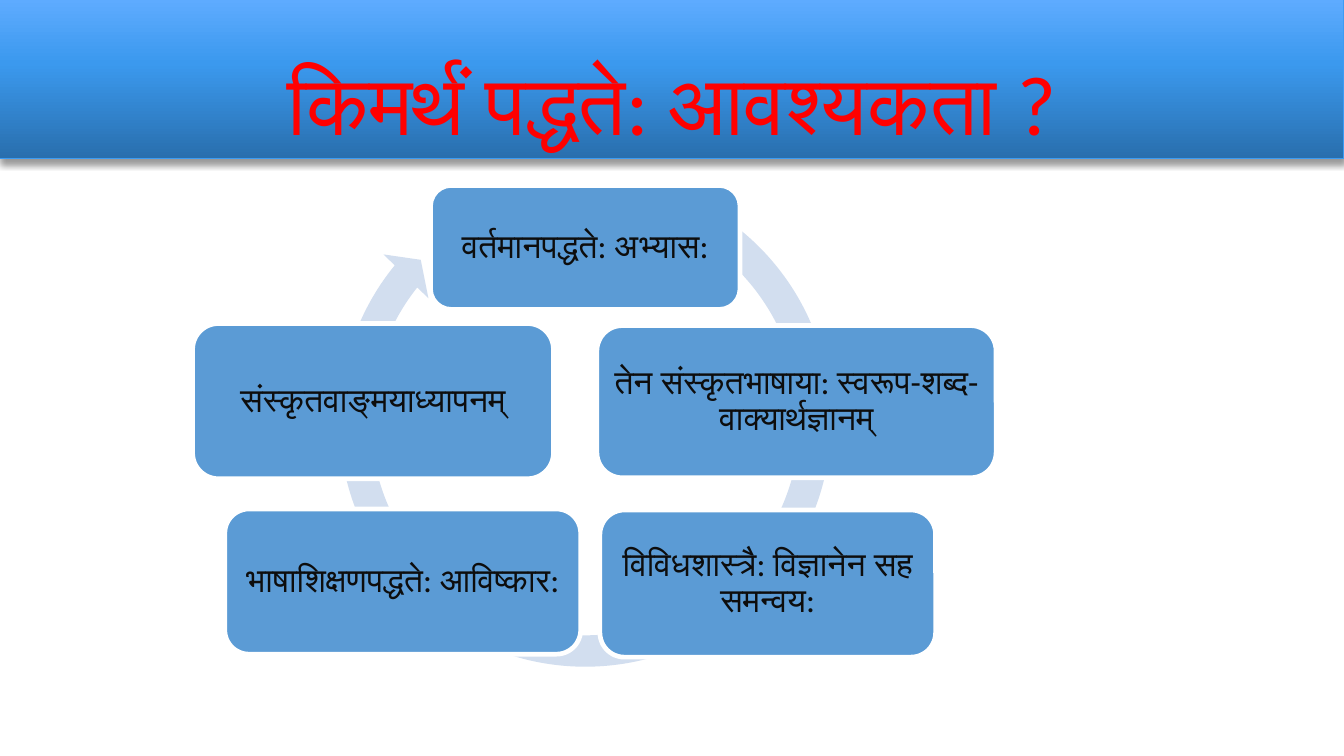
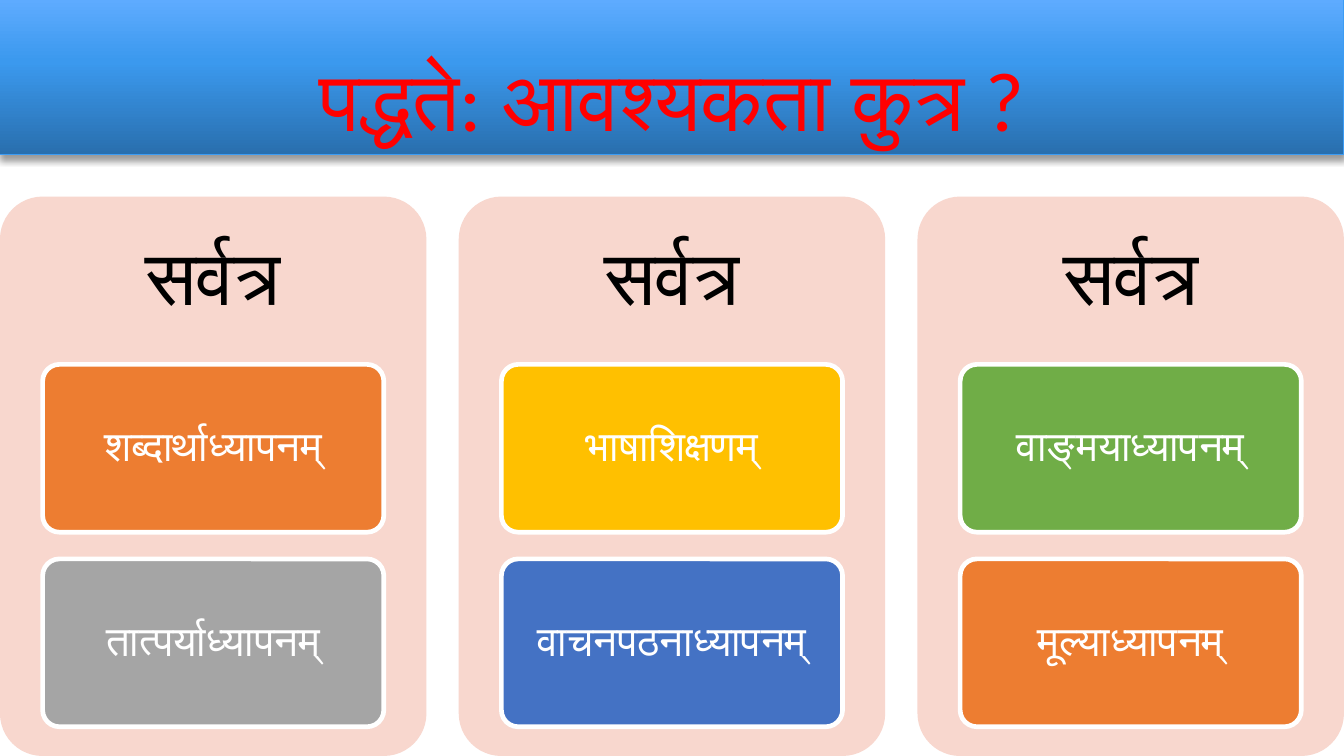
from copy import deepcopy
from dataclasses import dataclass

from lxml.etree import SubElement
from pptx import Presentation
from pptx.dml.color import RGBColor
from pptx.enum.shapes import MSO_SHAPE
from pptx.enum.text import MSO_ANCHOR, PP_ALIGN
from pptx.oxml.ns import qn
from pptx.shapes.autoshape import Shape
from pptx.slide import Slide
from pptx.util import Inches, Pt

WIDTH, HEIGHT = 13.33, 7.5
BODY_FONT, CARD_FONT = "Calibri", "Noto Sans Mono"
COLOURS = {
    "title": "FF0000", "band_line": "3C9CF4", "shadow": "000000",
    "arrow": "D2DEEF", "step": "5B9BD5", "step_text": "0D0D0D",
    "panel": "F8D7CE", "heading": "000000", "white": "FFFFFF",
    "orange": "ED7D31", "grey": "A5A5A5", "gold": "FFC000",
    "blue": "4472C4", "green": "70AD47",
}
BAND_GRADIENT = ((0, "296FAE"), (0.6, "3B99EE"), (1, "5EABFF"))
OUTLINE = 3.35


@dataclass(frozen=True)
class Frame:
    left: float
    top: float
    width: float
    height: float

    def lengths(self) -> tuple[int, ...]:
        return tuple(Inches(v) for v in (self.left, self.top, self.width, self.height))


@dataclass(frozen=True)
class TextStyle:
    size: float
    colour: str
    font: str = BODY_FONT
    anchor: MSO_ANCHOR = MSO_ANCHOR.MIDDLE
    margins: tuple[float, float] = (0.1, 0.1)


@dataclass(frozen=True)
class Step:
    frame: Frame
    text: str


@dataclass(frozen=True)
class Column:
    heading: str
    cards: tuple[tuple[str, str], ...]


TITLE = TextStyle(60, "title", anchor=MSO_ANCHOR.BOTTOM, margins=(0.1, 0.05))
STEP = TextStyle(24, "step_text")
HEADING = TextStyle(55, "heading", margins=(0.23, 0.23))
CARD = TextStyle(30, "white", font=CARD_FONT, margins=(0.08, 0.06))

STEPS = (
    Step(Frame(4.27, 1.84, 3.07, 1.23), "वर्तमानपद्धते: अभ्यास:"),
    Step(Frame(5.92, 3.23, 3.96, 1.51), "तेन संस्कृतभाषाया: स्वरूप-शब्द-वाक्यार्थज्ञानम्"),
    Step(Frame(5.95, 5.06, 3.33, 1.46), "विविधशास्त्रै: विज्ञानेन सह समन्वय:"),
    Step(Frame(2.23, 5.05, 3.53, 1.44), "भाषाशिक्षणपद्धते: आविष्कार:"),
    Step(Frame(1.91, 3.21, 3.58, 1.54), "संस्कृतवाङ्मयाध्यापनम्"),
)
CYCLE_FRAME = Frame(3.21, 1.58, 5.19, 5.19)
# Thickness, head angle, end angle, start angle and head width.
CYCLE_ADJUSTMENTS = (0.06, 3.31, 131.32, 177.91, 0.06)

COLUMNS = (
    Column("सर्वत्र", (("शब्दार्थाध्यापनम्", "orange"), ("तात्पर्याध्यापनम्", "grey"))),
    Column("सर्वत्र", (("भाषाशिक्षणम्", "gold"), ("वाचनपठनाध्यापनम्", "blue"))),
    Column("सर्वत्र", (("वाङ्मयाध्यापनम्", "green"), ("मूल्याध्यापनम्", "orange"))),
)
COLUMN_GAP = 0.32
PANEL_TOP = 1.95
CARD_PITCH = 1.93


def rgb(name: str) -> RGBColor:
    return RGBColor.from_string(COLOURS[name])


def write(box: Shape, text: str, style: TextStyle) -> None:
    frame = box.text_frame
    frame.word_wrap = True
    frame.vertical_anchor = style.anchor
    side, edge = (Inches(margin) for margin in style.margins)
    frame.margin_left = frame.margin_right = side
    frame.margin_top = frame.margin_bottom = edge
    frame.text = text
    para = frame.paragraphs[0]
    para.alignment = PP_ALIGN.CENTER
    para.line_spacing = 0.9
    font = para.runs[0].font
    font.size, font.name = Pt(style.size), style.font
    font.color.rgb = rgb(style.colour)


def add_block(page: Slide, kind: MSO_SHAPE, frame: Frame, fill: str,
              adjustments: tuple[float, ...] = (), outlined: bool = False) -> Shape:
    block = page.shapes.add_shape(kind, *frame.lengths())
    block.shadow.inherit = False
    block.fill.solid()
    block.fill.fore_color.rgb = rgb(fill)
    for index, value in enumerate(adjustments):
        block.adjustments[index] = value
    if outlined:
        block.line.color.rgb = rgb("white")
        block.line.width = Pt(OUTLINE)
    else:
        block.line.fill.background()
    return block


def add_drop_shadow(shape: Shape) -> None:
    shape.shadow.inherit = False
    effects = shape.element.spPr.find(qn("a:effectLst"))
    shadow = SubElement(effects, qn("a:outerShdw"), blurRad=str(Pt(5.2)),
                        dist=str(Pt(3)), dir="5400000", rotWithShape="0")
    colour = SubElement(shadow, qn("a:srgbClr"), val=COLOURS["shadow"])
    SubElement(colour, qn("a:alpha"), val="40000")


def add_title_band(page: Slide, text: str, height: float) -> None:
    band = page.shapes.add_shape(MSO_SHAPE.RECTANGLE, *Frame(0, 0, WIDTH, height).lengths())
    band.fill.gradient()
    band.fill.gradient_angle = 90
    stop_list = band.element.spPr.find(".//" + qn("a:gsLst"))
    stop_list.append(deepcopy(stop_list[0]))
    for stop, (position, colour) in zip(band.fill.gradient_stops, BAND_GRADIENT):
        stop.position = position
        stop.color.rgb = RGBColor.from_string(colour)
    band.line.color.rgb = rgb("band_line")
    band.line.width = Pt(0.75)
    add_drop_shadow(band)
    write(band, text, TITLE)


def add_column(page: Slide, index: int, column: Column) -> None:
    """Draw a panel with its heading in the top 30% and its cards below."""
    width = (WIDTH - COLUMN_GAP * (len(COLUMNS) - 1)) / len(COLUMNS)
    left, height = index * (width + COLUMN_GAP), HEIGHT - PANEL_TOP
    row = height * 0.3
    add_block(page, MSO_SHAPE.ROUNDED_RECTANGLE, Frame(left, PANEL_TOP, width, height),
              "panel", (0.1,))
    heading = page.shapes.add_textbox(*Frame(left, PANEL_TOP, width, row).lengths())
    write(heading, column.heading, HEADING)
    for number, (text, fill) in enumerate(column.cards):
        frame = Frame(left + width * 0.1, PANEL_TOP + row + number * CARD_PITCH,
                      width * 0.8, row)
        card = add_block(page, MSO_SHAPE.ROUNDED_RECTANGLE, frame, fill, (0.1,), True)
        write(card, text, CARD)


def build_cycle(page: Slide) -> None:
    add_title_band(page, "किमर्थं पद्धते: आवश्यकता ?", 1.57)
    add_block(page, MSO_SHAPE.CIRCULAR_ARROW, CYCLE_FRAME, "arrow", CYCLE_ADJUSTMENTS)
    for step in STEPS:
        box = add_block(page, MSO_SHAPE.ROUNDED_RECTANGLE, step.frame, "step", outlined=True)
        write(box, step.text, STEP)


def build_columns(page: Slide) -> None:
    add_title_band(page, "पद्धते: आवश्यकता कुत्र ?", 1.53)
    for index, column in enumerate(COLUMNS):
        add_column(page, index, column)


def main() -> None:
    deck = Presentation()
    deck.slide_width, deck.slide_height = Inches(WIDTH), Inches(HEIGHT)
    blank = deck.slide_layouts[6]
    for build in (build_cycle, build_columns):
        build(deck.slides.add_slide(blank))
    deck.save("out.pptx")


if __name__ == "__main__":
    main()
